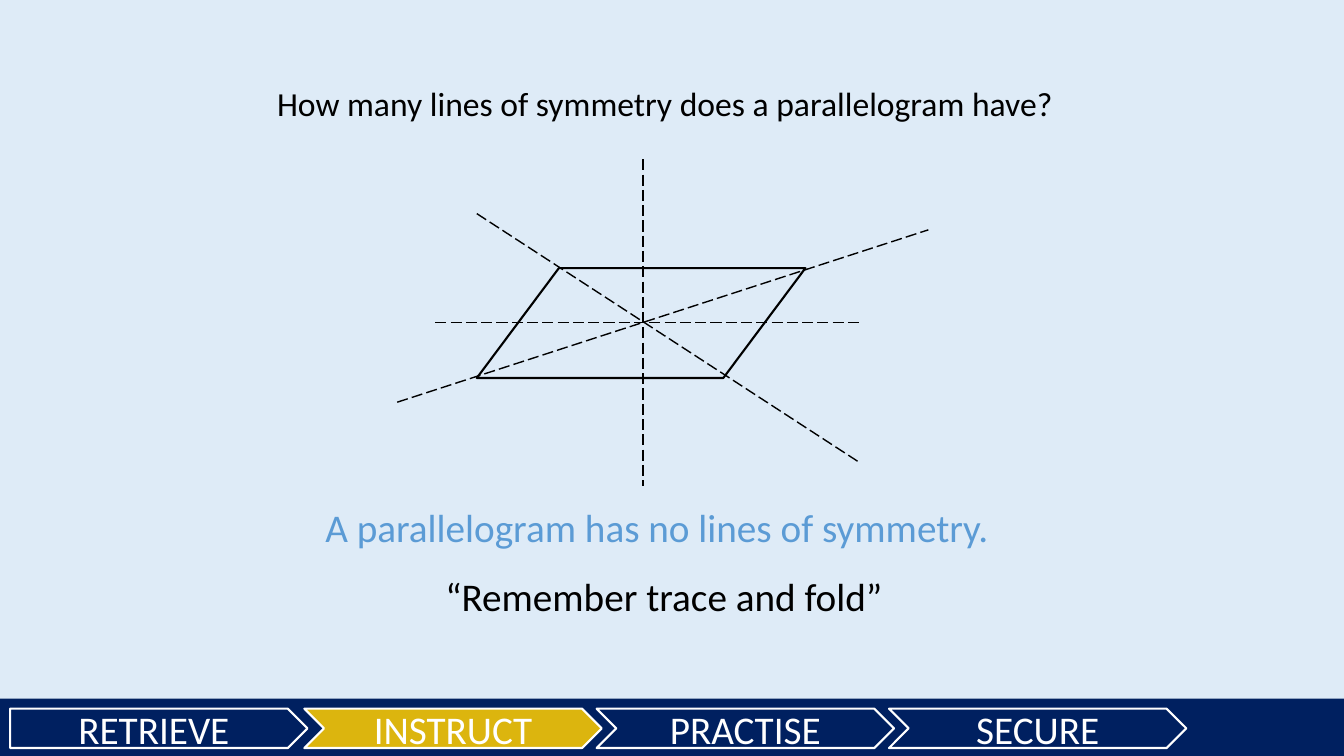
from pptx import Presentation
from pptx.dml.color import RGBColor
from pptx.enum.dml import MSO_LINE
from pptx.enum.shapes import MSO_CONNECTOR, MSO_SHAPE as Preset
from pptx.enum.text import MSO_ANCHOR as Anchor, MSO_AUTO_SIZE as AutoSize, PP_ALIGN as Align
from pptx.oxml.ns import qn
from pptx.util import Pt
from lxml.etree import SubElement

COLORS = {
    "background": "DEEBF7",
    "navy": "002060",
    "gold": "DCB50E",
    "answer": "5B9BD5",
    "white": "FFFFFF",
    "black": "000000",
}
FONT = "Calibri"


def color(name):
    return RGBColor.from_string(COLORS[name])


def write_text(frame, text, size=28, ink="black", align=Align.CENTER, anchor=Anchor.TOP):
    frame.word_wrap = True
    frame.auto_size = AutoSize.NONE
    frame.vertical_anchor = anchor
    para = frame.paragraphs[0]
    para.alignment = align
    span = para.add_run()
    span.text = text
    span.font.name = FONT
    span.font.size = Pt(size)
    span.font.color.rgb = color(ink)


class LessonPage:
    """Holds the page and draws its elements; lengths are in points."""

    def __init__(self, deck):
        self.page = deck.slides.add_slide(deck.slide_layouts[5])
        fill = self.page.background.fill
        fill.solid()
        fill.fore_color.rgb = color("background")

    def title(self, text, left, top, width, height, **style):
        box = self.page.shapes.title
        box.left, box.top, box.width, box.height = map(Pt, (left, top, width, height))
        write_text(box.text_frame, text, **style)

    def label(self, text, left, top, width, height, **style):
        box = self.page.shapes.add_textbox(*map(Pt, (left, top, width, height)))
        write_text(box.text_frame, text, **style)

    def shape(self, preset, left, top, width, height, fill, outline=None):
        shape = self.page.shapes.add_shape(preset, *map(Pt, (left, top, width, height)))
        shape.shadow.inherit = False
        shape.fill.solid()
        shape.fill.fore_color.rgb = color(fill)
        if outline:
            shape.line.color.rgb = color(outline)
            shape.line.width = Pt(1.5)
        else:
            shape.line.fill.background()
        return shape

    def stage(self, preset, text, left, fill="navy"):
        arrow = self.shape(preset, left, 506.2, 212.4, 28.1, fill, "white")
        write_text(arrow.text_frame, text, ink="white", anchor=Anchor.MIDDLE)

    def dashed_line(self, *ends):
        line = self.page.shapes.add_connector(MSO_CONNECTOR.STRAIGHT, *map(Pt, ends))
        line.line.color.rgb = color("black")
        line.line.width = Pt(1)
        line.line.dash_style = MSO_LINE.LONG_DASH
        SubElement(line._element.spPr, qn("a:effectLst"))


def main():
    deck = Presentation()
    deck.slide_width, deck.slide_height = Pt(960), Pt(540)
    lesson = LessonPage(deck)

    # Lesson stages along the bottom
    lesson.shape(Preset.RECTANGLE, 0, 499, 960, 41, "navy")
    lesson.stage(Preset.PENTAGON, "RETRIEVE", 7.2)
    later_stages = [("INSTRUCT", "gold"), ("PRACTISE", "navy"), ("SECURE", "navy")]
    for index, (name, fill) in enumerate(later_stages):
        lesson.stage(Preset.CHEVRON, name, 217.4 + 208.8 * index, fill)

    # Parallelogram with the candidate fold lines
    figure = lesson.shape(Preset.PARALLELOGRAM, 340.6, 191.5, 234.7, 78.5, "background", "black")
    figure.adjustments[0] = 0.747
    for ends in [
        (283.7, 287.3, 663.1, 164.2),
        (340.6, 152.6, 613.4, 330),
        (459.4, 113.8, 459.4, 347),
        (311, 230.4, 613.4, 230.4),
    ]:
        lesson.dashed_line(*ends)

    # Question, answer and reminder
    lesson.title("How many lines of symmetry does a parallelogram have?",
                 178.6, 55.4, 592.6, 36, size=24)
    lesson.label("A parallelogram has no lines of symmetry.",
                 172.8, 355.7, 592.6, 41, ink="answer")
    lesson.label("“Remember trace and fold”",
                 311, 405.4, 478.8, 41, align=Align.LEFT)

    deck.save("out.pptx")


if __name__ == "__main__":
    main()
